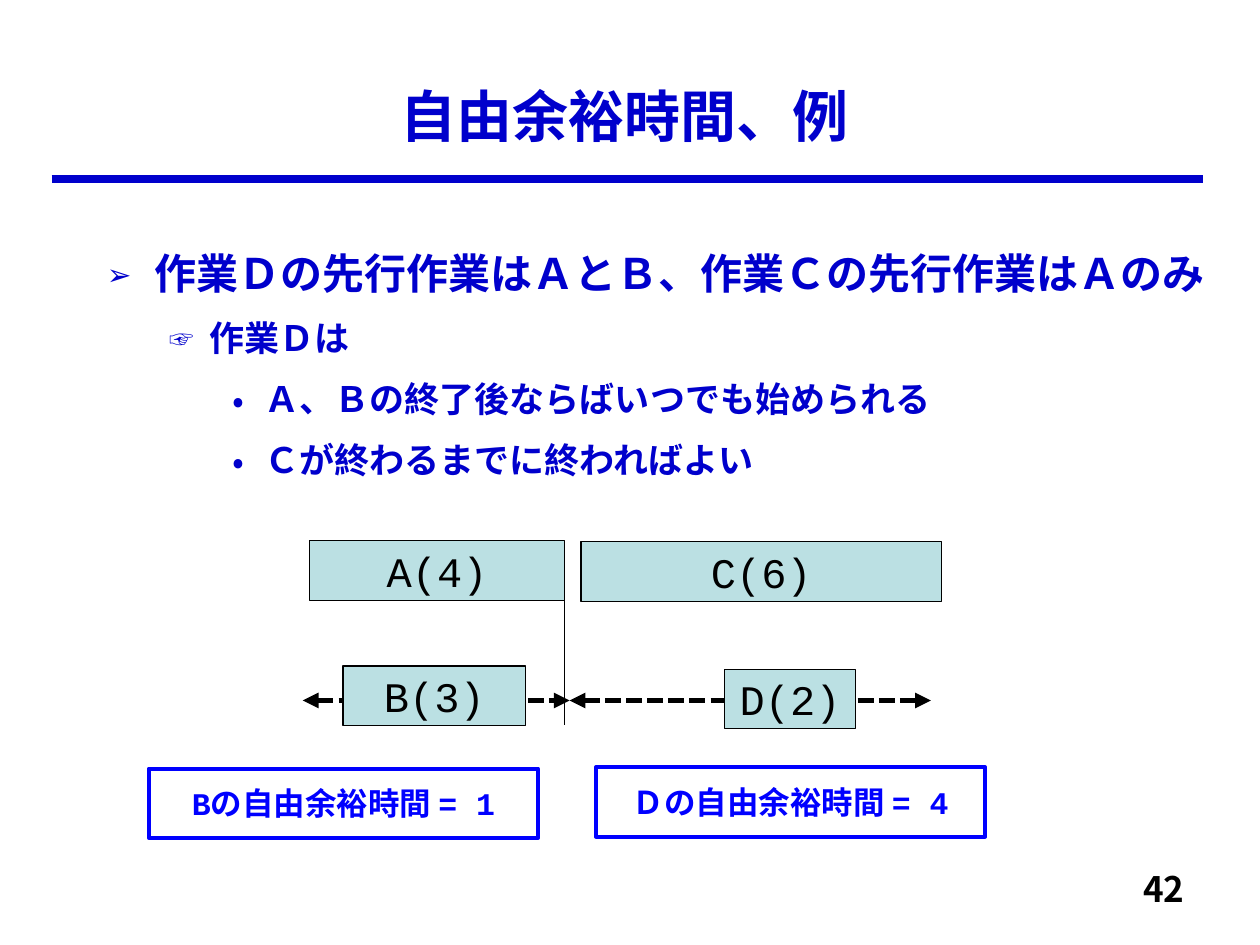
import pptx
import pptx.util
import pptx.dml.color
import pptx.enum.dml
import pptx.enum.shapes
import pptx.enum.text
import pptx.oxml.ns
from lxml import etree

Pt = pptx.util.Pt
Align = pptx.enum.text.PP_ALIGN
Anchor = pptx.enum.text.MSO_ANCHOR


class Deck:
    """Hold the style and the current slide, and draw each kind of element."""

    hues = {"navy": "0000CC", "blue": "0000FF", "teal": "BBE0E3", "black": "000000"}
    sans = "Noto Sans CJK JP"
    mono = "Courier New"

    def __init__(self, wide, high):
        self.prs = pptx.Presentation()
        self.prs.slide_width, self.prs.slide_height = Pt(wide), Pt(high)
        self.slide = self.prs.slides.add_slide(self.prs.slide_layouts[6])

    def hue(self, name):
        return pptx.dml.color.RGBColor.from_string(self.hues[name])

    def tag(self, parent, name, **attrs):
        return etree.SubElement(parent, pptx.oxml.ns.qn(name), attrs)

    def style(self, para, size, hue, face, bold):
        font = para.font
        font.size, font.bold, font.name = Pt(size), bold, face
        font.color.rgb = self.hue(hue)
        props = para._p.pPr.find(pptx.oxml.ns.qn("a:defRPr"))
        self.tag(props, "a:ea", typeface=self.sans)

    def text(self, box, words, size, hue, align=Align.CENTER):
        shape = self.slide.shapes.add_textbox(*map(Pt, box))
        frame = shape.text_frame
        frame.word_wrap = True
        frame.vertical_anchor = Anchor.MIDDLE if align == Align.CENTER else Anchor.TOP
        para = frame.paragraphs[0]
        para.text, para.alignment = words, align
        self.style(para, size, hue, self.sans, True)

    def bullets(self, box, items):
        marks = [("➢", 70, 27, 27, 24), ("☞", 70, 58.5, 22.5, 20), ("•", 100, 90, 18, 20)]
        frame = self.slide.shapes.add_textbox(*map(Pt, box)).text_frame
        frame.word_wrap = True
        for n, (level, words) in enumerate(items):
            para = frame.add_paragraph() if n else frame.paragraphs[0]
            mark, scale, left, hang, size = marks[level]
            para.text, para.level, para.line_spacing = words, level, 1.2
            para.space_before = Pt(6 if n else 0)
            props = para._p.get_or_add_pPr()
            props.set("marL", str(Pt(left)))
            props.set("indent", str(-Pt(hang)))
            self.tag(props, "a:buSzPct", val=str(scale * 1000))
            self.tag(props, "a:buFont", typeface=self.sans)
            self.tag(props, "a:buChar", char=mark)
            self.style(para, size, "navy", self.sans, True)

    def box(self, box, words, size, ink, edge, width, fill=None, bold=False):
        kind = pptx.enum.shapes.MSO_SHAPE.RECTANGLE
        shape = self.slide.shapes.add_shape(kind, *map(Pt, box))
        shape.shadow.inherit = False
        if fill:
            shape.fill.solid()
            shape.fill.fore_color.rgb = self.hue(fill)
        else:
            shape.fill.background()
        shape.line.color.rgb, shape.line.width = self.hue(edge), Pt(width)
        frame = shape.text_frame
        frame.word_wrap, frame.vertical_anchor = False, Anchor.MIDDLE
        para = frame.paragraphs[0]
        para.text, para.alignment = words, Align.CENTER
        self.style(para, size, ink, self.mono, bold)

    def task(self, box, words):
        self.box(box, words, 24, "black", "black", 0.75, "teal")

    def note(self, left, top, words):
        self.box((left, top, 222.5, 39.6), words, 18, "blue", "blue", 2.25, bold=True)

    def line(self, start, end, hue, width):
        kind = pptx.enum.shapes.MSO_CONNECTOR.STRAIGHT
        link = self.slide.shapes.add_connector(kind, *map(Pt, start + end))
        link.line.color.rgb, link.line.width = self.hue(hue), Pt(width)
        self.tag(link._element.spPr, "a:effectLst")
        return link

    def span(self, left, right, y):
        link = self.line((left, y), (right, y), "black", 3)
        link.line.dash_style = pptx.enum.dml.MSO_LINE.SQUARE_DOT
        stroke = link.line._get_or_add_ln()
        for end in ("a:headEnd", "a:tailEnd"):
            self.tag(stroke, end, type="triangle")


def main():
    deck = Deck(720, 540)
    deck.line((29.5, 102.5), (687.5, 102.5), "navy", 4.5)
    deck.text((534, 492, 150, 36), "42", 20, "black", Align.RIGHT)
    deck.text((36.5, 36, 641, 60), "自由余裕時間、例", 32, "navy")
    deck.bullets((54, 132, 646.5, 348), [
        (0, "作業Ｄの先行作業はＡとＢ、作業Ｃの先行作業はＡのみ"),
        (1, "作業Ｄは"),
        (2, "Ａ、Ｂの終了後ならばいつでも始められる"),
        (2, "Ｃが終わるまでに終わればよい"),
    ])
    deck.span(325.5, 532, 400.3)
    deck.span(173, 325.5, 400.3)
    for left, top, width, words in [
        (177, 309, 145.5, "A(4)"),
        (332, 309.6, 206, "C(6)"),
        (414, 382.5, 75, "D(2)"),
        (196, 380.6, 104.4, "B(3)"),
    ]:
        deck.task((left, top, width, 34), words)
    deck.line((322.5, 343), (322.5, 414.5), "black", 0.75)
    deck.note(340.5, 438.5, "Ｄの自由余裕時間 = 4")
    deck.note(85, 439.2, "Bの自由余裕時間 = 1")
    deck.prs.save("out.pptx")


if __name__ == "__main__":
    main()
